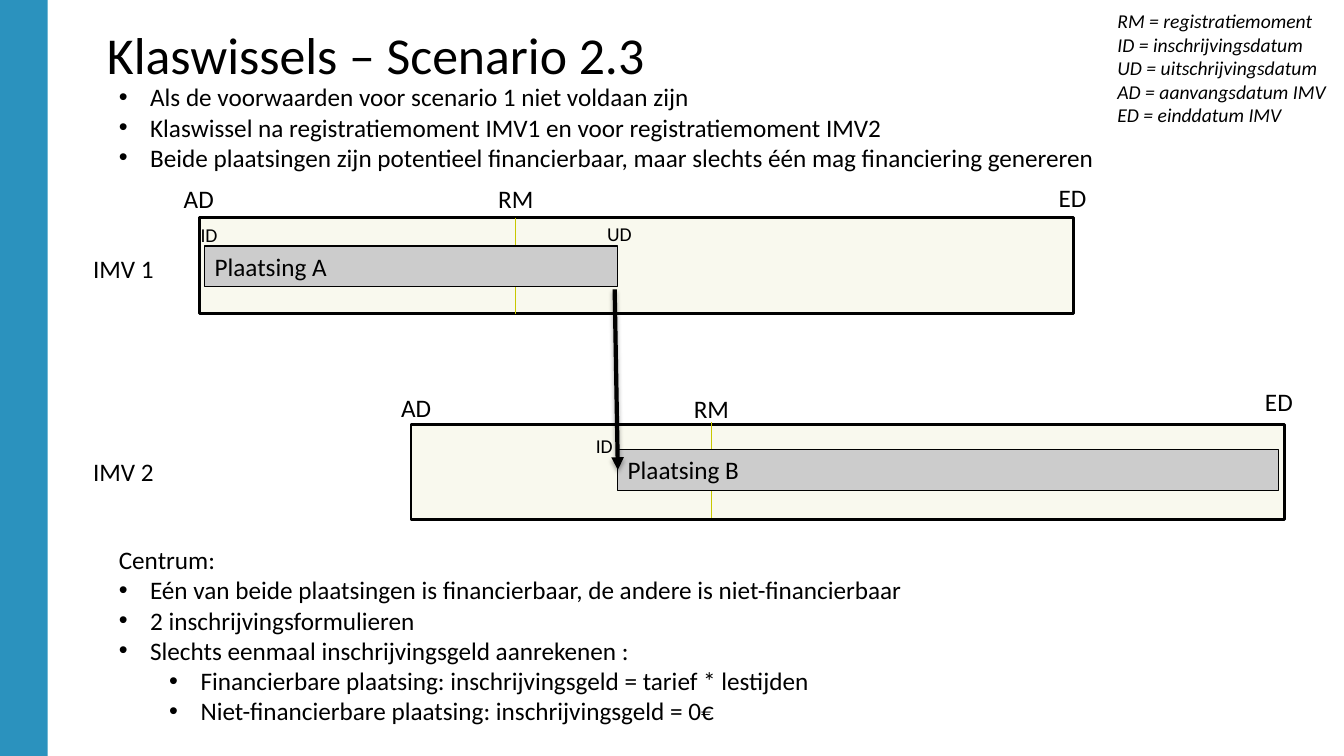
from lxml.etree import SubElement
from pptx import Presentation
from pptx.dml.color import RGBColor
from pptx.enum.shapes import MSO_CONNECTOR, MSO_SHAPE
from pptx.enum.text import MSO_ANCHOR, MSO_AUTO_SIZE, PP_ALIGN
from pptx.oxml.ns import qn
from pptx.util import Cm, Pt

BLACK, CREAM, GREY, OLIVE, BLUE = "000000", "F9F9EE", "CCCCCC", "C8C800", "2B92BE"
LABEL_WIDTHS = {"AD": 1.27, "RM": 1.4, "ED": 1.22, "UD": 1.4, "ID": 1.45}
FRAME_WIDTH, FRAME_HEIGHT, BAR_HEIGHT = 22.02, 2.41, 1.02

CONDITIONS = [
    (0, "Als de voorwaarden voor scenario 1 niet voldaan zijn"),
    (0, "Klaswissel na registratiemoment IMV1 en voor registratiemoment IMV2"),
    (0, "Beide plaatsingen zijn potentieel financierbaar, "
        "maar slechts één mag financiering genereren"),
]
CENTRE_RULES = [
    (None, "Centrum:"),
    (0, "Eén van beide plaatsingen is financierbaar, de andere is niet-financierbaar"),
    (0, "2 inschrijvingsformulieren"),
    (0, "Slechts eenmaal inschrijvingsgeld aanrekenen :"),
    (1, "Financierbare plaatsing: inschrijvingsgeld = tarief * lestijden"),
    (1, "Niet-financierbare plaatsing: inschrijvingsgeld = 0€"),
]
LEGEND = [
    "RM = registratiemoment",
    "ID = inschrijvingsdatum",
    "UD = uitschrijvingsdatum",
    "AD = aanvangsdatum IMV",
    "ED = einddatum IMV",
]


def colour(hex_value):
    return RGBColor.from_string(hex_value)


def set_values(target, **values):
    for name, value in values.items():
        setattr(target, name, value)


def place(shape, left, top, width, height):
    set_values(shape, left=Cm(left), top=Cm(top), width=Cm(width), height=Cm(height))


def write(box, lines, size=18, align=PP_ALIGN.LEFT, italic=False, **frame_values):
    """Fill the box with one paragraph per line and return the paragraphs."""
    frame = box.text_frame
    set_values(frame, **{"word_wrap": True, "auto_size": MSO_AUTO_SIZE.NONE,
                         "vertical_anchor": MSO_ANCHOR.TOP, **frame_values})
    frame.text = "\n".join(lines)
    for para in frame.paragraphs:
        set_values(para, alignment=align, space_before=Pt(0))
        for span in para.runs:
            set_values(span.font, name="Calibri", size=Pt(size), italic=italic)
            span.font.color.rgb = colour(BLACK)
    return frame.paragraphs


def write_list(box, items):
    paras = write(box, [text for level, text in items])
    for para, (level, text) in zip(paras, items):
        properties = para._p.get_or_add_pPr()
        if level is None:
            properties.set("marL", "0")
            properties.set("indent", "0")
            SubElement(properties, qn("a:buNone"))
            continue
        para.level = level
        properties.set("marL", str(Cm(0.79 + 1.27 * level)))
        properties.set("indent", str(-Cm(0.79)))
        SubElement(properties, qn("a:buFont"), typeface="Arial")
        SubElement(properties, qn("a:buChar"), char="•")


def add_block(page, left, top, width, height, fill, line_width=0):
    block = page.shapes.add_shape(
        MSO_SHAPE.RECTANGLE, Cm(left), Cm(top), Cm(width), Cm(height))
    block.shadow.inherit = False
    block.fill.solid()
    block.fill.fore_color.rgb = colour(fill)
    if line_width:
        block.line.color.rgb = colour(BLACK)
        block.line.width = Pt(line_width)
    else:
        block.line.fill.background()
    return block


def add_bar(page, text, left, top, width):
    bar = add_block(page, left, top, width, BAR_HEIGHT, GREY, 0.75)
    write(bar, [text])
    return bar


def add_label(page, text, centre, top, size=18):
    width = LABEL_WIDTHS.get(text, 2.06)
    box = page.shapes.add_textbox(
        Cm(centre - width / 2), Cm(top), Cm(width), Cm(size * 0.056))
    write(box, [text], size, PP_ALIGN.CENTER, word_wrap=False)


def add_line(page, start, end, line_colour, width):
    """Add a straight connector and return it with its empty effect list."""
    line = page.shapes.add_connector(
        MSO_CONNECTOR.STRAIGHT, *[Cm(value) for value in start + end])
    line.line.color.rgb = colour(line_colour)
    line.line.width = Pt(width)
    return line, SubElement(line._element.spPr, qn("a:effectLst"))


def add_period(page, name, name_top, left, top, moment, moment_top, labels):
    add_block(page, left, top, FRAME_WIDTH, FRAME_HEIGHT, CREAM, 2)
    add_line(page, (moment, moment_top), (moment, moment_top + FRAME_HEIGHT), OLIVE, 0.75)
    add_label(page, name, 3.11, name_top)
    for text, centre, label_top in labels:
        add_label(page, text, centre, label_top)


def add_switch_arrow(page, target):
    arrow, effects = add_line(page, (15.49, 7.29), (15.57, 11.84), BLACK, 3)
    arrow.end_connect(target, 1)
    SubElement(arrow.line._get_or_add_ln(), qn("a:tailEnd"), type="triangle")
    shadow = SubElement(effects, qn("a:outerShdw"), blurRad=str(Pt(3.1)),
                        dist=str(Pt(1.8)), dir="5400000", rotWithShape="0")
    shade = SubElement(shadow, qn("a:srgbClr"), val=BLACK)
    SubElement(shade, qn("a:alpha"), val="35000")


def main():
    deck = Presentation()
    set_values(deck, slide_width=Cm(33.87), slide_height=Cm(19.05))
    page = deck.slides.add_slide(deck.slide_layouts.get_by_name("Two Content"))
    title, conditions, centre_rules = list(page.placeholders)[:3]
    for spare in list(page.placeholders)[3:]:
        spare._element.getparent().remove(spare._element)

    place(title, 2.44, 0.33, 27.79, 1.24)
    write(title, ["Klaswissels – Scenario 2.3"], 37, margin_top=Cm(0.23))
    place(conditions, 2.74, 1.93, 25.35, 2.57)
    write_list(conditions, CONDITIONS)
    place(centre_rules, 2.74, 13.59, 24.51, 5.46)
    write_list(centre_rules, CENTRE_RULES)

    add_block(page, 0, 0, 1.2, 19.05, BLUE)
    legend = page.shapes.add_textbox(Cm(27.91), Cm(0.1), Cm(5.94), Cm(3.25))
    write(legend, LEGEND, 14, italic=True, word_wrap=False)

    add_period(page, "IMV 1", 6.25, 5.03, 5.49, 13, 5.49,
               [("AD", 5.01, 4.5), ("RM", 13, 4.5), ("ED", 27.03, 4.47)])
    add_period(page, "IMV 2", 11.38, 10.36, 10.69, 17.93, 10.64,
               [("AD", 10.49, 9.75), ("RM", 17.93, 9.78), ("ED", 32.23, 9.6)])

    add_bar(page, "Plaatsing A", 5.16, 6.2, 10.41)
    second_bar = add_bar(page, "Plaatsing B", 15.57, 11.33, 16.64)
    add_switch_arrow(page, second_bar)
    for text, centre, top in [("ID", 5.27, 5.49), ("UD", 15.61, 5.46), ("ID", 15.23, 10.82)]:
        add_label(page, text, centre, top, 14)

    deck.save("out.pptx")


if __name__ == "__main__":
    main()
